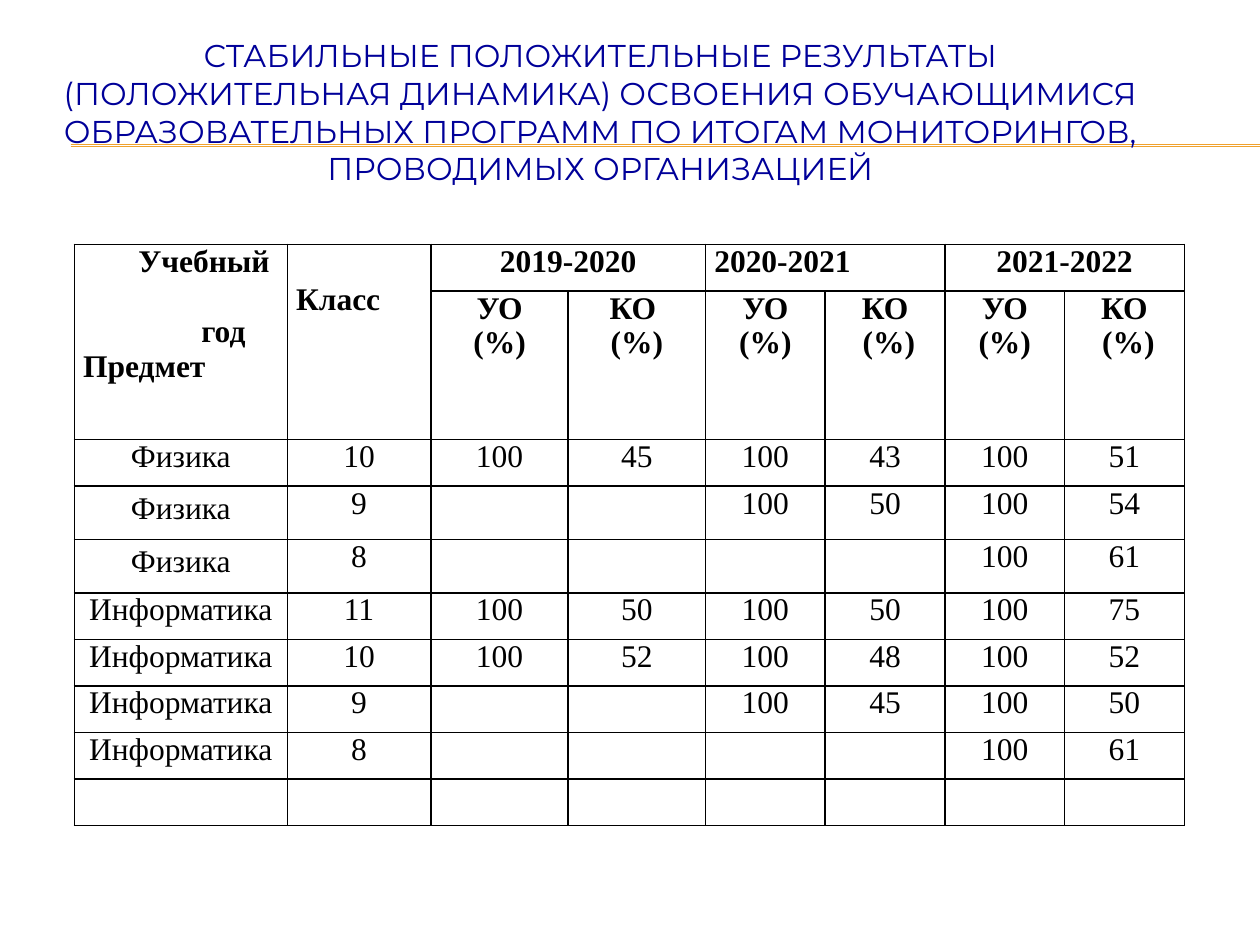
from dataclasses import dataclass

import pptx
import pptx.dml.color
import pptx.enum.shapes
import pptx.enum.text
import pptx.oxml
import pptx.oxml.ns
import pptx.util

ALIGN = pptx.enum.text.PP_ALIGN
WIDTH = pptx.util.Inches(10)
HEIGHT = pptx.util.Inches(7.5)
BLACK = "000000"
NAVY = "000099"
GOLD = "F0A22E"
TABLE_FONT = "Times New Roman"

# Shares of the slide's width and height, in percent
COLUMNS = [16.9, 11.4] + [10.9] * 2 + [9.5] * 4
ROWS = [4.92, 9.87, 4.92, 5.66, 5.66] + [4.92] * 5

TITLE = (
    "СТАБИЛЬНЫЕ ПОЛОЖИТЕЛЬНЫЕ РЕЗУЛЬТАТЫ (ПОЛОЖИТЕЛЬНАЯ ДИНАМИКА) "
    "ОСВОЕНИЯ ОБУЧАЮЩИМИСЯ ОБРАЗОВАТЕЛЬНЫХ ПРОГРАММ ПО ИТОГАМ "
    "МОНИТОРИНГОВ, ПРОВОДИМЫХ ОРГАНИЗАЦИЕЙ"
)


@dataclass
class YearHeader:
    label: str
    alignment: ALIGN
    quality_lines: tuple[str, str]


@dataclass
class SubjectRow:
    subject: str
    grade: str
    results: tuple[str, ...]
    line_spacing: float = 1.0


YEARS = [
    YearHeader("2019-2020", ALIGN.CENTER, ("КО ", "(%)")),
    YearHeader("2020-2021", ALIGN.LEFT, ("КО", " (%)")),
    YearHeader("2021-2022", ALIGN.CENTER, ("КО", " (%)")),
]
SUBJECTS = [
    SubjectRow("Физика", "10", ("100", "45", "100", "43", "100", "51")),
    SubjectRow("Физика", "9", ("", "", "100", "50", "100", "54"), 1.15),
    SubjectRow("Физика", "8", ("", "", "", "", "100", "61"), 1.15),
    SubjectRow("Информатика", "11", ("100", "50", "100", "50", "100", "75")),
    SubjectRow("Информатика", "10", ("100", "52", "100", "48", "100", "52")),
    SubjectRow("Информатика", "9", ("", "", "100", "45", "100", "50")),
    SubjectRow("Информатика", "8", ("", "", "", "", "100", "61")),
]


def across(percent: float) -> int:
    return round(WIDTH * percent / 100)


def down(percent: float) -> int:
    return round(HEIGHT * percent / 100)


def color(value: str) -> pptx.dml.color.RGBColor:
    return pptx.dml.color.RGBColor.from_string(value)


def write(frame, text: str, *, font: str = TABLE_FONT, size: float = 18,
          bold: bool = False, fill: str = BLACK, alignment=ALIGN.CENTER,
          line_spacing: float = 1.0, indent: float = 0, space_before: float = 0):
    """Fill the frame's empty first paragraph, or append another one."""
    first = frame.paragraphs[0]
    paragraph = frame.add_paragraph() if first.runs else first
    paragraph.alignment = alignment
    paragraph.line_spacing = line_spacing
    if indent:
        paragraph._p.get_or_add_pPr().set("marL", str(pptx.util.Pt(indent)))
    if space_before:
        paragraph.space_before = pptx.util.Pt(space_before)
    run = paragraph.add_run()
    run.text = text
    run.font.name = font
    run.font.size = pptx.util.Pt(size)
    run.font.bold = bold
    run.font.color.rgb = color(fill)


def add_rule(slide, top: float) -> None:
    rule = slide.shapes.add_connector(
        pptx.enum.shapes.MSO_CONNECTOR.STRAIGHT,
        across(5.6), down(top), across(100), down(top))
    rule.line.color.rgb = color(GOLD)
    rule.line.width = pptx.util.Pt(0.75)
    rule._element.spPr.append(pptx.oxml.parse_xml(
        f'<a:effectLst {pptx.oxml.ns.nsdecls("a")}/>'))


def add_title(slide) -> None:
    box = slide.shapes.add_textbox(across(3.9), down(3.07), across(87.5), down(17.47))
    box.text_frame.word_wrap = True
    box.text_frame.vertical_anchor = pptx.enum.text.MSO_ANCHOR.MIDDLE
    write(box.text_frame, TITLE, font="Montserrat", fill=NAVY)


def style_cell(cell) -> None:
    """Clear the fill, set the margins and draw thin black borders."""
    cell.fill.background()
    cell.margin_left = cell.margin_right = pptx.util.Inches(0.07)
    cell.margin_top = cell.margin_bottom = 0
    properties = cell._tc.get_or_add_tcPr()
    for position, side in enumerate(("lnL", "lnR", "lnT", "lnB")):
        properties.insert(position, pptx.oxml.parse_xml(
            f'<a:{side} {pptx.oxml.ns.nsdecls("a")} w="{pptx.util.Pt(1)}">'
            f'<a:solidFill><a:srgbClr val="{BLACK}"/></a:solidFill></a:{side}>'))


def fill_header(table) -> None:
    corner = table.cell(0, 0)
    corner.merge(table.cell(1, 0))
    write(corner.text_frame, "Учебный", bold=True, alignment=ALIGN.LEFT, indent=31.5)
    write(corner.text_frame, "год", bold=True, alignment=ALIGN.LEFT,
          indent=67.5, space_before=20)
    write(corner.text_frame, "Предмет", bold=True, alignment=ALIGN.LEFT)

    grade = table.cell(0, 1)
    grade.merge(table.cell(1, 1))
    grade.margin_top = pptx.util.Inches(0.3)
    write(grade.text_frame, "Класс", bold=True, alignment=ALIGN.LEFT)

    for index, year in enumerate(YEARS):
        column = 2 + 2 * index
        heading = table.cell(0, column)
        heading.merge(table.cell(0, column + 1))
        write(heading.text_frame, year.label, bold=True, alignment=year.alignment)
        for offset, lines in enumerate((("УО", "(%)"), year.quality_lines)):
            for line in lines:
                write(table.cell(1, column + offset).text_frame, line, bold=True)


def fill_subjects(table) -> None:
    for row, entry in enumerate(SUBJECTS, start=2):
        write(table.cell(row, 0).text_frame, entry.subject,
              line_spacing=entry.line_spacing)
        for column, value in enumerate((entry.grade, *entry.results), start=1):
            if value:
                write(table.cell(row, column).text_frame, value)


def add_results_table(slide) -> None:
    table = slide.shapes.add_table(
        len(ROWS), len(COLUMNS), across(5.9), down(25.87),
        across(sum(COLUMNS)), down(sum(ROWS))).table
    table.first_row = table.horz_banding = False
    for column, share in zip(table.columns, COLUMNS):
        column.width = across(share)
    for row, share in zip(table.rows, ROWS):
        row.height = down(share)
    for cell in table.iter_cells():
        style_cell(cell)
    fill_header(table)
    fill_subjects(table)


def main() -> None:
    presentation = pptx.Presentation()
    presentation.slide_width = WIDTH
    presentation.slide_height = HEIGHT
    slide = presentation.slides.add_slide(presentation.slide_layouts[6])
    for top in (15.33, 15.47):
        add_rule(slide, top)
    add_title(slide)
    add_results_table(slide)
    presentation.save("out.pptx")


if __name__ == "__main__":
    main()
